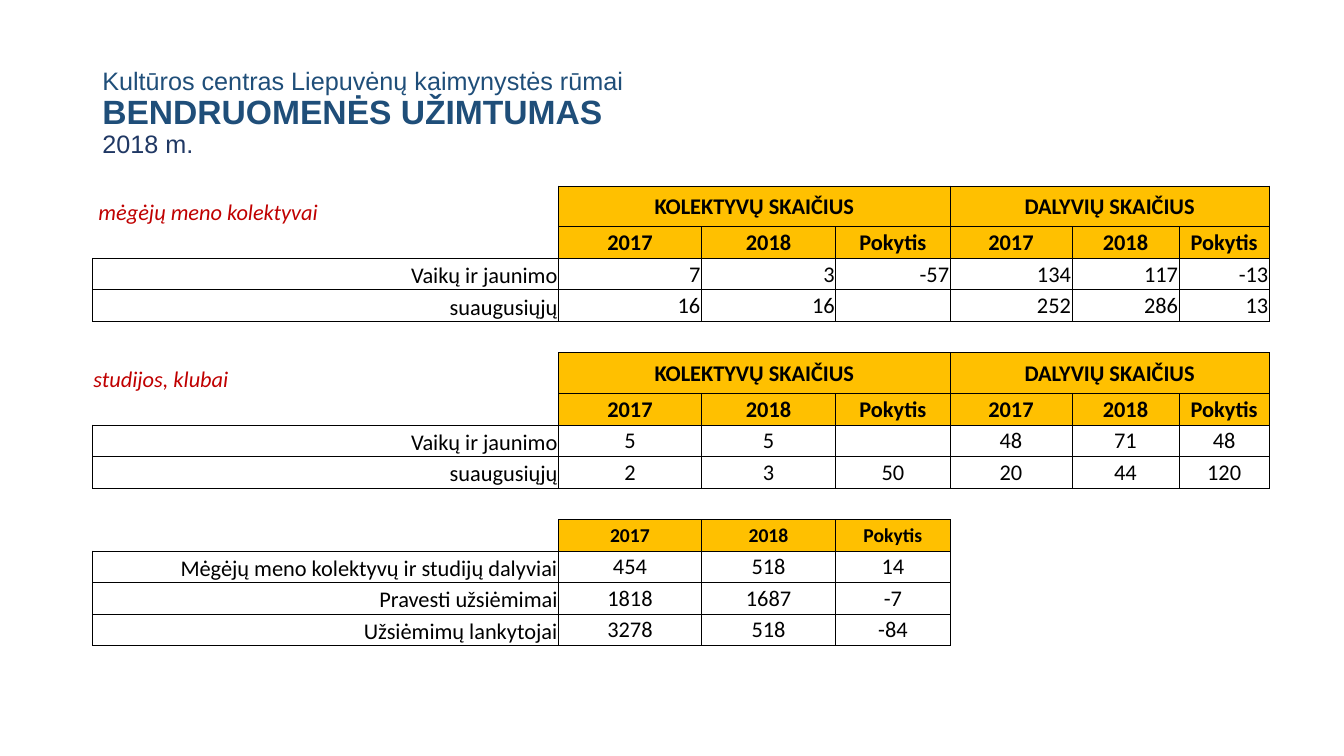
from lxml import etree
from pptx import Presentation
from pptx import util as u
from pptx.dml.color import RGBColor
from pptx.enum import text
from pptx.oxml.ns import qn

BLACK = RGBColor(0x00, 0x00, 0x00)
RED = RGBColor(0xC0, 0x00, 0x00)
GOLD = RGBColor(0xFF, 0xC0, 0x00)
BLUE = RGBColor(0x1F, 0x4E, 0x79)
NAVY = RGBColor(0x20, 0x38, 0x64)

PX = 9525
NO_STYLE = "{2D5ABB26-0587-4C30-8999-92F81FD0307C}"
LEFT, CENTER, RIGHT = (text.PP_ALIGN.LEFT, text.PP_ALIGN.CENTER,
                       text.PP_ALIGN.RIGHT)
MIDDLE, BOTTOM = text.MSO_ANCHOR.MIDDLE, text.MSO_ANCHOR.BOTTOM

# Table content: (row kind, label, values)
GROUPS = ["KOLEKTYVŲ SKAIČIUS", "", "", "DALYVIŲ SKAIČIUS", "", ""]
YEARS = ["2017", "2018", "Pokytis"]
ROWS = [
    ("group", " mėgėjų meno kolektyvai", GROUPS),
    ("years", "", YEARS * 2),
    ("right", "Vaikų ir jaunimo", ["7", "3", "-57", "134", "117", "-13"]),
    ("right", "suaugusiųjų", ["16", "16", "", "252", "286", "13"]),
    ("gap", "", []),
    ("group", "studijos, klubai", GROUPS),
    ("years", "", YEARS * 2),
    ("center", "Vaikų ir jaunimo", ["5", "5", "", "48", "71", "48"]),
    ("center", "suaugusiųjų", ["2", "3", "50", "20", "44", "120"]),
    ("gap", "", []),
    ("total", "", YEARS),
    ("center", "Mėgėjų meno kolektyvų ir studijų dalyviai", ["454", "518", "14"]),
    ("center", "Pravesti užsiėmimai", ["1818", "1687", "-7"]),
    ("center", "Užsiėmimų lankytojai", ["3278", "518", "-84"]),
]
COLS = [444, 136, 128, 109, 116, 102, 86]
HEADS = ("group", "years", "total")


def boxed(row, col):
    """True where a cell has a frame of its own."""
    if not (0 <= row < len(ROWS) and 0 <= col < len(COLS)):
        return False
    kind, _, values = ROWS[row]
    return kind in ("right", "center") if col == 0 else col <= len(values)


class Deck:
    def __init__(self, width, height):
        self.prs = Presentation()
        self.prs.slide_width, self.prs.slide_height = width * PX, height * PX
        self.s = self.prs.slides.add_slide(self.prs.slide_layouts[6])

    def style(self, font, color, **fmt):
        for name, value in fmt.items():
            setattr(font, name, value)
        font.color.rgb = color

    def title(self, x, y, w, h, lines):
        sp = self.s.shapes.add_textbox(x * PX, y * PX, w * PX, h * PX)
        tf = sp.text_frame
        tf.word_wrap = True
        tf.vertical_anchor = MIDDLE
        p = tf.paragraphs[0]
        p.line_spacing = 0.9
        for i, (line, size, bold, color) in enumerate(lines):
            if i:
                p.add_line_break()
            r = p.add_run()
            r.text = line
            self.style(r.font, color, name="Arial", size=u.Pt(size), bold=bold)

    def table(self, x, y, cols, heights):
        frame = self.s.shapes.add_table(len(heights), len(cols), x * PX, y * PX,
                                        sum(cols) * PX, sum(heights) * PX)
        tbl = frame.table
        tbl.first_row = tbl.horz_banding = False
        frame._element.find(".//" + qn("a:tableStyleId")).text = NO_STYLE
        for column, width in zip(tbl.columns, cols):
            column.width = width * PX
        for row, height in zip(tbl.rows, heights):
            row.height = height * PX
        return tbl

    def cell(self, cell, words, align, anchor, color, fill=None, **fmt):
        insets = dict(margin_left=PX, margin_right=PX, margin_top=PX,
                      margin_bottom=0, vertical_anchor=anchor)
        for name, value in insets.items():
            setattr(cell, name, value)
        p = cell.text_frame.paragraphs[0]
        p.alignment = align
        if words:
            r = p.add_run()
            r.text = words
            self.style(r.font, color, name="Calibri", **fmt)
        else:
            etree.SubElement(p._p, qn("a:endParaRPr"), sz="1600")
        if fill is None:
            cell.fill.background()
        else:
            cell.fill.solid()
            cell.fill.fore_color.rgb = fill

    def borders(self, cell, sides):
        tc_pr = cell._tc.get_or_add_tcPr()
        for side, drawn in sides.items():
            ln = etree.SubElement(tc_pr, qn("a:ln" + side), w=str(u.Pt(0.5)))
            if drawn:
                solid = etree.SubElement(ln, qn("a:solidFill"))
                etree.SubElement(solid, qn("a:srgbClr"), val=str(BLACK))
            else:
                etree.SubElement(ln, qn("a:noFill"))


def main():
    deck = Deck(1280, 720)

    # Heading
    deck.title(88, 39, 1104, 139, [
        ("Kultūros centras Liepuvėnų kaimynystės rūmai", 18, False, BLUE),
        ("BENDRUOMENĖS UŽIMTUMAS", 24, True, BLUE),
        ("2018 m.", 18, False, NAVY),
    ])

    # Participation table
    heights = [39 if kind == "group" else 30 for kind, _, _ in ROWS]
    tbl = deck.table(88, 177, COLS, heights)
    for i, (kind, label, values) in enumerate(ROWS):
        head = kind in HEADS
        for j in range(len(COLS)):
            cell = tbl.cell(i, j)
            near = {"L": (i, j - 1), "R": (i, j + 1),
                    "T": (i - 1, j), "B": (i + 1, j)}
            deck.borders(cell, {side: boxed(i, j) or boxed(*other)
                                for side, other in near.items()})
            if j == 0:
                deck.cell(cell, label, LEFT if head else RIGHT, BOTTOM,
                          RED if head else BLACK, size=u.Pt(16), italic=head)
            else:
                words = values[j - 1] if j <= len(values) else ""
                deck.cell(cell, words, RIGHT if kind == "right" else CENTER,
                          MIDDLE, BLACK, GOLD if head and boxed(i, j) else None,
                          size=u.Pt(14 if kind == "total" else 16), bold=head)
        if kind == "group":
            for first in (1, 4):
                tbl.cell(i, first).merge(tbl.cell(i, first + 2))

    deck.prs.save("out.pptx")


if __name__ == "__main__":
    main()
